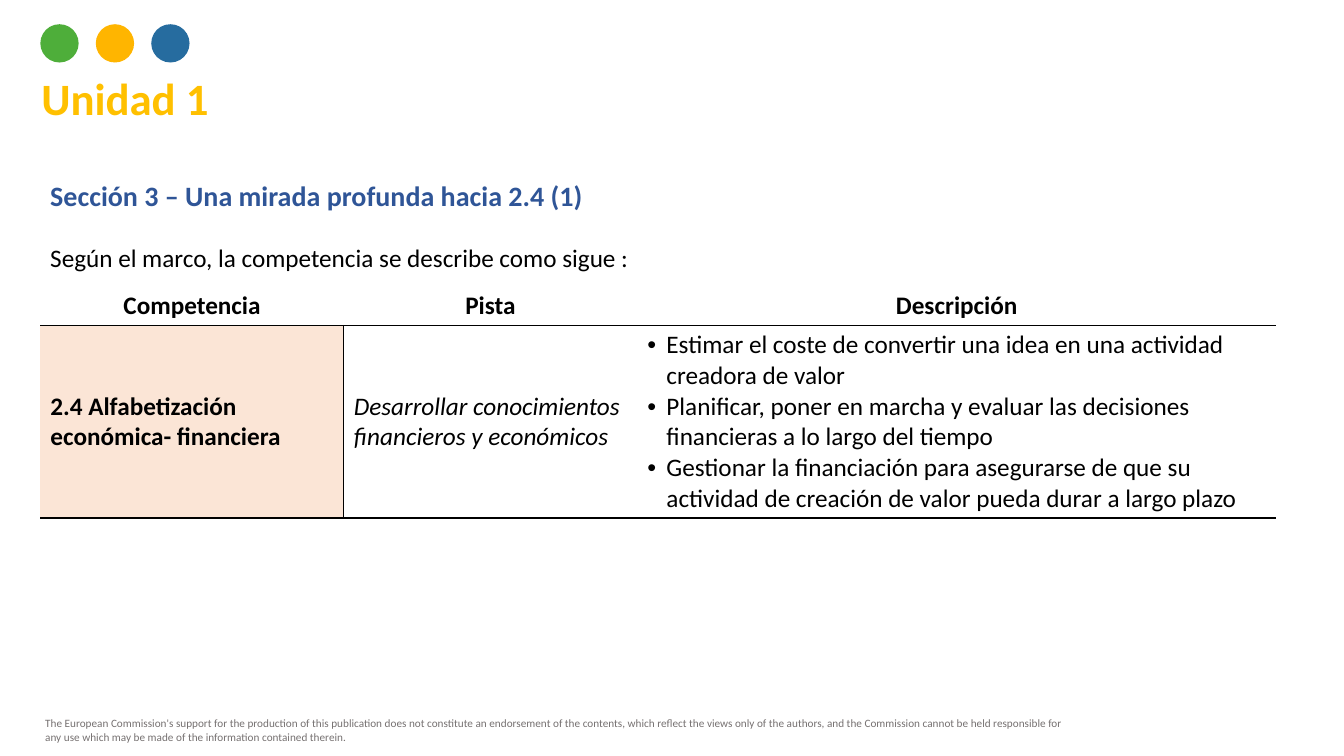
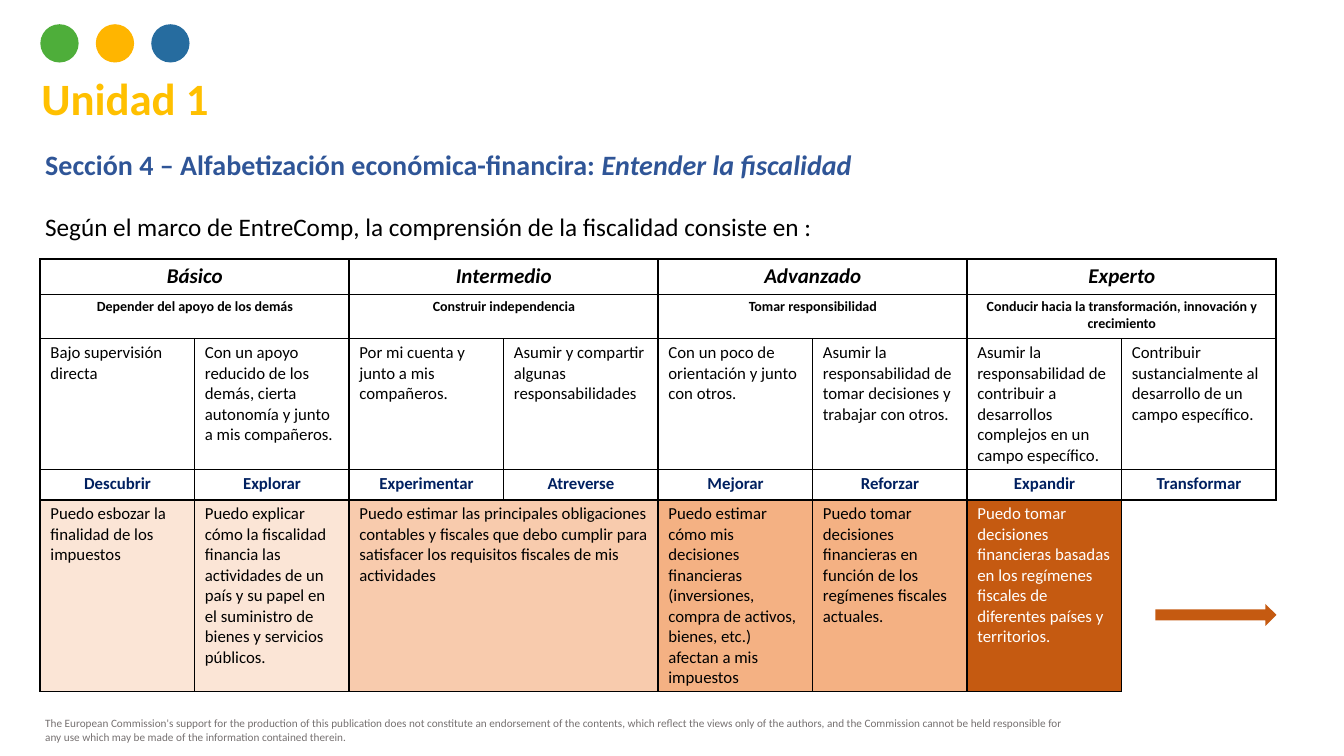
from dataclasses import dataclass

from lxml.etree import SubElement
from pptx import Presentation
from pptx.dml.color import RGBColor
from pptx.enum.shapes import MSO_SHAPE as Form
from pptx.enum.text import MSO_ANCHOR as Anchor, MSO_AUTO_SIZE as Fit, PP_ALIGN as Align
from pptx.oxml import parse_xml
from pptx.oxml.ns import nsdecls, qn
from pptx.util import Inches, Pt

FONT = "Calibri"
COLORS = {
    "black": "000000", "white": "FFFFFF", "grey": "767171", "gold": "FFC000",
    "blue": "2F5597", "navy": "002060",
    "dot green": "4EAE3A", "dot gold": "FFB500", "dot blue": "266C9F",
    "peach": "FBE5D6", "apricot": "F8CBAD", "orange": "F4B183", "rust": "C55A11",
}
FOOTER = (
    "The European Commission's support for the production of this publication does not "
    "constitute an endorsement of the contents, which reflect the views only of the authors, "
    "and the Commission cannot be held responsible for any use which may be made of the "
    "information contained therein."
)
LEFT, WIDTH = 0.4, 12.26
THIN, THICK = 1, 1.5


@dataclass(frozen=True)
class Style:
    size: float
    color: str = "black"
    bold: bool = False
    italic: bool = False
    align: Align = Align.LEFT


@dataclass(frozen=True)
class Entry:
    """Table text with its first column and the number of columns it covers."""
    text: str
    col: int
    span: int = 1
    fill: str = ""
    color: str = "black"


@dataclass(frozen=True)
class Edges:
    """Border widths in points; zero means no line."""
    left: float = 0
    right: float = 0
    top: float = 0
    bottom: float = 0


TITLE = Style(32, "gold", bold=True)
NOTE = Style(8, "grey")
SECTION = Style(20, "blue", bold=True, align=Align.JUSTIFY)
ACCENT = Style(20, "blue", bold=True, italic=True)
INTRO = Style(18, align=Align.JUSTIFY)
HEAD = Style(18, bold=True, align=Align.CENTER)
LEVEL = Style(15, bold=True, italic=True, align=Align.CENTER)
SUPPORT = Style(10, bold=True, align=Align.CENTER)
STAGE = Style(12, "navy", bold=True, align=Align.CENTER)
BODY = Style(12)


def rgb(name: str) -> RGBColor:
    return RGBColor.from_string(COLORS[name])


def set_font(run, style: Style) -> None:
    font = run.font
    font.name, font.size = FONT, Pt(style.size)
    font.bold, font.italic = style.bold, style.italic
    font.color.rgb = rgb(style.color)


def set_style(frame, style: Style) -> None:
    for par in frame.paragraphs:
        par.alignment = style.align
        for run in par.runs:
            set_font(run, style)


def add_text(slide, box: tuple, text: str, style: Style):
    frame = slide.shapes.add_textbox(*map(Inches, box)).text_frame
    frame.word_wrap = True
    frame.text = text
    set_style(frame, style)
    return frame


def add_form(slide, form: Form, box: tuple, color: str) -> None:
    shape = slide.shapes.add_shape(form, *map(Inches, box))
    shape.shadow.inherit = False
    shape.fill.solid()
    shape.fill.fore_color.rgb = rgb(color)
    shape.line.fill.background()


def add_page(deck):
    """Adds a slide with the shared title, dots and footer."""
    slide = deck.slides.add_slide(deck.slide_layouts[5])
    title = slide.shapes.title
    title.left, title.top = Inches(0.31), Inches(0.65)
    title.width, title.height = Inches(2.1), Inches(0.64)
    frame = title.text_frame
    frame.text = "Unidad 1"
    frame.word_wrap, frame.auto_size = True, Fit.NONE
    frame.vertical_anchor = Anchor.TOP
    set_style(frame, TITLE)
    for i, color in enumerate(("dot green", "dot gold", "dot blue")):
        add_form(slide, Form.OVAL, (LEFT + 0.55 * i, 0.24, 0.38, 0.38), color)
    add_text(slide, (0.35, 7.06, 10.46, 0.37), FOOTER, NOTE)
    return slide


def add_intro(slide, left: float, top: float, head: str, accent: str, intro: str) -> None:
    frame = add_text(slide, (left, top, WIDTH, 1.04), head, SECTION)
    if accent:
        run = frame.paragraphs[0].add_run()
        run.text = accent
        set_font(run, ACCENT)
    par = frame.add_paragraph()
    par.text = intro
    par.alignment, par.space_before = INTRO.align, Pt(22)
    set_font(par.runs[0], INTRO)


def add_grid(slide, top: float, cols: list, rows: list):
    """Adds a plain table without styled bands."""
    box = (LEFT, top, sum(cols), sum(rows))
    table = slide.shapes.add_table(len(rows), len(cols), *map(Inches, box)).table
    table.first_row = table.horz_banding = False
    for col, width in zip(table.columns, cols):
        col.width = Inches(width)
    for row, height in zip(table.rows, rows):
        row.height = Inches(height)
    return table


def set_cell(cell, text: str, style: Style, fill: str = "", anchor: Anchor = Anchor.TOP) -> None:
    cell.text_frame.text = text
    set_style(cell.text_frame, style)
    cell.vertical_anchor = anchor
    if fill:
        cell.fill.solid()
        cell.fill.fore_color.rgb = rgb(fill)


def set_edges(cell, edges: Edges) -> None:
    cell.margin_top = cell.margin_bottom = Inches(0.04)
    if not cell.fill.type:
        cell.fill.background()
    props = cell._tc.get_or_add_tcPr()
    sides = zip("LRTB", (edges.left, edges.right, edges.top, edges.bottom))
    for i, (side, width) in enumerate(sides):
        paint = "<a:noFill/>"
        if width:
            paint = f'<a:solidFill><a:srgbClr val="{COLORS["black"]}"/></a:solidFill>'
        props.insert(i, parse_xml(
            f'<a:ln{side} {nsdecls("a")} w="{Pt(width)}">{paint}</a:ln{side}>'))


def add_bullets(frame) -> None:
    for par in frame.paragraphs:
        props = par._p.get_or_add_pPr()
        props.set("marL", str(Inches(0.19)))
        props.set("indent", str(Inches(-0.19)))
        SubElement(props, qn("a:buFont"), typeface="Arial")
        SubElement(props, qn("a:buChar"), char="•")


def build_skill(deck) -> None:
    slide = add_page(deck)
    add_intro(slide, LEFT, 1.72, "Sección 3 – Una mirada profunda hacia 2.4 (1)", "",
              "Según el marco, la competencia se describe como sigue :")
    table = add_grid(slide, 2.84, [3.01, 2.91, 6.34], [0.39, 1.91])
    for col, text in enumerate(("Competencia", "Pista", "Descripción")):
        set_cell(table.cell(0, col), text, HEAD, anchor=Anchor.MIDDLE)
        set_edges(table.cell(0, col), Edges(bottom=THIN))

    skill, track, goals = (table.cell(1, col) for col in range(3))
    set_cell(skill, "2.4 Alfabetización económica- financiera",
             Style(18, bold=True), "peach", Anchor.MIDDLE)
    set_cell(track, "Desarrollar conocimientos financieros y económicos",
             Style(18, italic=True), anchor=Anchor.MIDDLE)
    set_cell(goals, "\n".join((
        "Estimar el coste de convertir una idea en una actividad creadora de valor",
        "Planificar, poner en marcha y evaluar las decisiones financieras a lo largo del tiempo",
        "Gestionar la financiación para asegurarse de que su actividad de creación de valor "
        "pueda durar a largo plazo",
    )), Style(18), anchor=Anchor.MIDDLE)
    add_bullets(goals.text_frame)
    set_edges(skill, Edges(right=THIN, top=THIN, bottom=THIN))
    set_edges(track, Edges(left=THIN, top=THIN, bottom=THIN))
    set_edges(goals, Edges(top=THIN, bottom=THIN))


def pairs(*texts: str) -> list[Entry]:
    return [Entry(text, 2 * i, 2) for i, text in enumerate(texts)]


def singles(*texts: str) -> list[Entry]:
    return [Entry(text, i) for i, text in enumerate(texts)]


LEVELS = [
    (LEVEL, pairs("Básico", "Intermedio", "Advanzado", "Experto")),
    (SUPPORT, pairs(
        "Depender del apoyo de los demás", "Construir independencia", "Tomar responsibilidad",
        "Conducir hacia la transformación, innovación y crecimiento")),
    (BODY, singles(
        "Bajo supervisión directa",
        "Con un apoyo reducido de los demás, cierta autonomía y junto a mis compañeros.",
        "Por mi cuenta y junto a mis compañeros.",
        "Asumir y compartir algunas responsabilidades",
        "Con un poco de orientación y junto con otros.",
        "Asumir la responsabilidad de tomar decisiones y trabajar con otros.",
        "Asumir la responsabilidad de contribuir a desarrollos complejos en un campo específico.",
        "Contribuir sustancialmente al desarrollo de un campo específico.")),
    (STAGE, singles("Descubrir", "Explorar", "Experimentar", "Atreverse",
                    "Mejorar", "Reforzar", "Expandir", "Transformar")),
    (BODY, [
        Entry("Puedo esbozar la finalidad de los impuestos", 0, fill="peach"),
        Entry("Puedo explicar cómo la fiscalidad financia las actividades de un país y su papel "
              "en el suministro de bienes y servicios públicos.", 1, fill="peach"),
        Entry("Puedo estimar las principales obligaciones contables y fiscales que debo cumplir "
              "para satisfacer los requisitos fiscales de mis actividades", 2, 2, "apricot"),
        Entry("Puedo estimar cómo mis decisiones financieras (inversiones, compra de activos, "
              "bienes, etc.) afectan a mis impuestos", 4, fill="orange"),
        Entry("Puedo tomar decisiones financieras en función de los regímenes fiscales actuales.",
              5, fill="orange"),
        Entry("Puedo tomar decisiones financieras basadas en los regímenes fiscales de "
              "diferentes países y territorios.", 6, fill="rust", color="white"),
    ]),
]


def level_edges(cell, row: int, col: int) -> Edges:
    """Heavy lines frame the table and each pair of columns."""
    last = len(LEVELS) - 1
    if (row, col) == (last, 7):
        return Edges(left=THIN, top=THIN)
    first = col % 2 == 0
    inner = 0 if cell.is_spanned else THIN
    return Edges(
        left=THICK if first else inner,
        right=THIN if first and not cell.is_merge_origin else THICK,
        top=THIN if row else THICK,
        bottom=THICK if row == last else THIN,
    ) if (row, col) != (last, 6) else Edges(THICK, THIN, THIN, THICK)


def build_levels(deck) -> None:
    slide = add_page(deck)
    add_intro(slide, 0.35, 1.41, "Sección 4 – Alfabetización económica-financira: ",
              "Entender la fiscalidad",
              "Según el marco de EntreComp, la comprensión de la fiscalidad consiste en :")
    table = add_grid(slide, 2.57, [WIDTH / 8] * 8, [0.35, 0.44, 1.3, 0.3, 1.9])
    for row, (style, entries) in enumerate(LEVELS):
        for item in entries:
            cell = table.cell(row, item.col)
            if item.span > 1:
                cell.merge(table.cell(row, item.col + item.span - 1))
            look = Style(style.size, item.color, align=style.align) if item.fill else style
            set_cell(cell, item.text, look, item.fill)
        for col in range(8):
            cell = table.cell(row, col)
            set_edges(cell, level_edges(cell, row, col))
    add_form(slide, Form.RIGHT_ARROW, (11.46, 5.99, 1.2, 0.22), "rust")


def main() -> None:
    deck = Presentation()
    deck.slide_width, deck.slide_height = Inches(13.33), Inches(7.5)
    build_skill(deck)
    build_levels(deck)
    deck.save("out.pptx")


if __name__ == "__main__":
    main()
